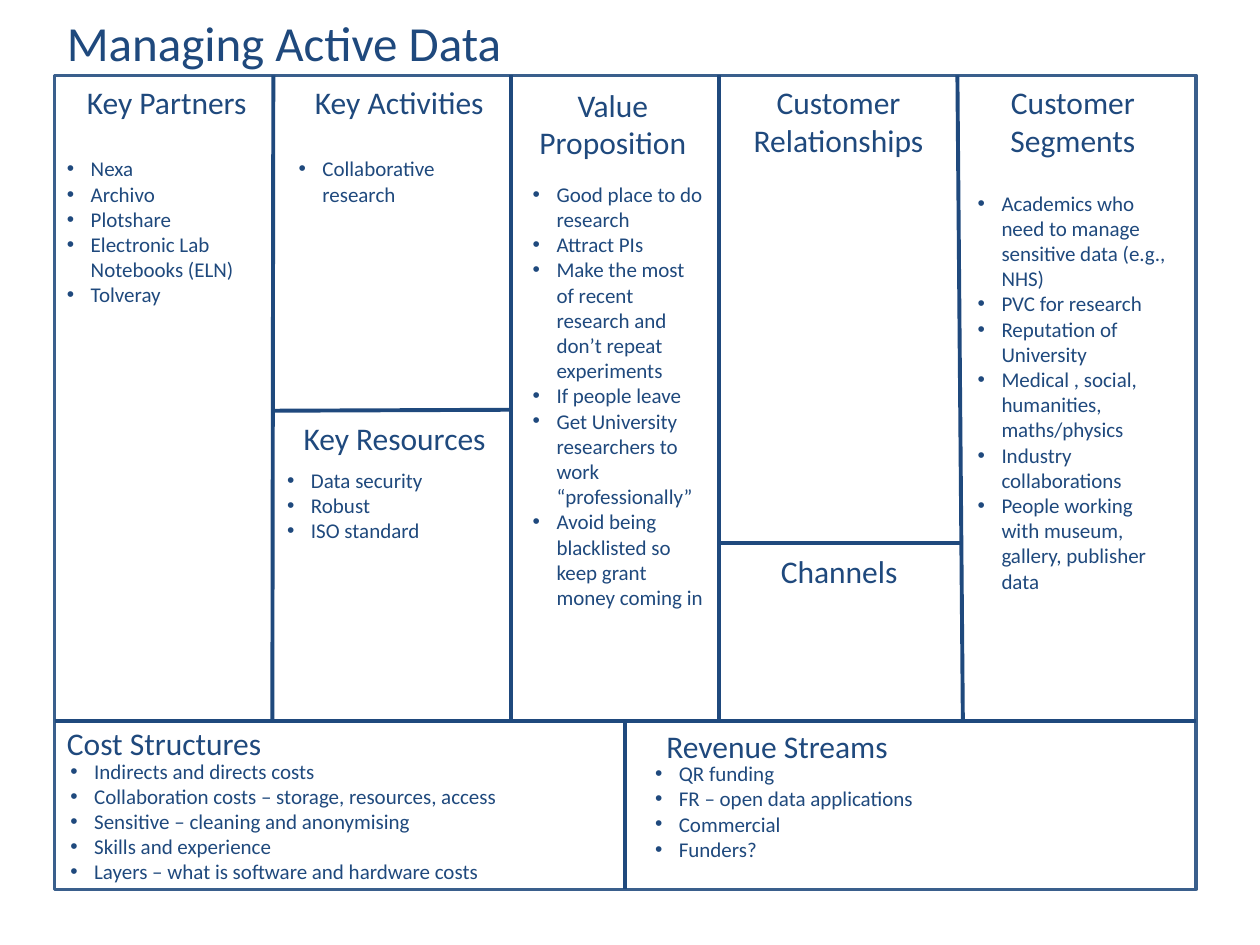
import lxml.etree
import pptx
import pptx.dml.color
import pptx.enum.shapes
import pptx.enum.text
import pptx.oxml.ns
import pptx.util
from pptx.util import Cm

NAVY = pptx.dml.color.RGBColor(0x1F, 0x49, 0x7D)
FRAME_BLUE = pptx.dml.color.RGBColor(0x3A, 0x5F, 0x8C)
FONT = "Calibri"
LEFT = pptx.enum.text.PP_ALIGN.LEFT
CENTER = pptx.enum.text.PP_ALIGN.CENTER

# Canvas edges and dividers, in centimetres
CANVAS = (1.1, 1.52, 23.01, 16.41)
X0, Y0 = CANVAS[:2]
X_END, Y_END = X0 + CANVAS[2], Y0 + CANVAS[3]
X1, X2, X3, X4 = 5.5, 10.31, 14.5, 19.35
X_MIDDLE = X0 + CANVAS[2] / 2
Y_RESOURCES, Y_CHANNELS, Y_BOTTOM = 8.27, 10.95, 14.53

DIVIDERS = [
    (5.51, Y0, 5.49, Y_BOTTOM),
    (X2, Y0, X2, Y_BOTTOM),
    (X3, Y0, X3, Y_BOTTOM),
    (19.3, Y0, 19.41, Y_BOTTOM),
    (5.49, 8.28, 10.29, 8.26),
    (X3, Y_CHANNELS, 19.41, Y_CHANNELS),
    (X0, Y_BOTTOM, X_END, Y_BOTTOM),
]

# Cell corner, heading, heading box, alignment, list box, items.
# Boxes are left, top, width, height measured from the cell corner.
CELLS = [
    ((X0, Y0), "Key Partners", (0.4, 0.03, 3.76, 1.02), LEFT,
     (0, 1.5, 4.39, 7.95),
     ["Nexa", "Archivo", "Plotshare", "Electronic Lab Notebooks (ELN)", "Tolveray"]),
    ((X1, Y0), "Key Activities", (0.6, 0.03, 3.96, 1.02), LEFT,
     (0.27, 1.5, 4.39, 1.8), ["Collaborative research"]),
    ((X1, Y_RESOURCES), "Key Resources", (0.37, 0.06, 4.22, 1.02), LEFT,
     (0.04, 1.03, 4.85, 1.8), ["Data security", "Robust", "ISO standard"]),
    ((X2, Y0), "Value Proposition", (0.1, 0.08, 3.89, 1.8), CENTER,
     (0.18, 2.01, 3.99, 8.97),
     ["Good place to do research", "Attract PIs",
      "Make the most of recent research and don’t repeat experiments",
      "If people leave", "Get University researchers to work “professionally”",
      "Avoid being blacklisted so keep grant money coming in"]),
    ((X3, Y0), "Customer Relationships", (0.21, 0.03, 4.39, 1.8), CENTER,
     None, []),
    ((X3, Y_CHANNELS), "Channels", (0.99, 0.05, 2.9, 1.02), LEFT, None, []),
    ((X4, Y0), "Customer Segments", (0.11, 0.03, 4.34, 1.8), CENTER,
     (0.11, 2.19, 4.39, 10.52),
     ["Academics who need to manage sensitive data (e.g., NHS)",
      "PVC for research", "Reputation of University",
      "Medical , social, humanities, maths/physics",
      "Industry collaborations",
      "People working with museum, gallery, publisher data"]),
    ((X0, Y_BOTTOM), "Cost Structures", (0, -0.05, 4.47, 1.02), LEFT,
     (0.07, 0.63, 10.52, 3.33),
     ["Indirects and directs costs",
      "Collaboration costs – storage, resources, access",
      "Sensitive – cleaning and anonymising", "Skills and experience",
      "Layers – what is software and hardware costs"]),
    ((X_MIDDLE, Y_BOTTOM), "Revenue Streams", (0.58, 0, 5.03, 1.02), LEFT,
     (0.35, 0.68, 10.52, 2.31),
     ["QR funding", "FR – open data applications", "Commercial", "Funders?"]),
]


def add_text(slide, box, lines, size, alignment=LEFT, wrap=True):
    text_frame = slide.shapes.add_textbox(*map(Cm, box)).text_frame
    text_frame.word_wrap = wrap
    text_frame.text = "\n".join(lines)
    for paragraph in text_frame.paragraphs:
        paragraph.alignment = alignment
        for run in paragraph.runs:
            run.font.size = pptx.util.Pt(size)
            run.font.name = FONT
            run.font.color.rgb = NAVY
    return text_frame


def add_bullet(paragraph):
    properties = paragraph._p.get_or_add_pPr()
    properties.set("marL", str(Cm(0.48)))
    properties.set("indent", str(-Cm(0.48)))
    font = lxml.etree.SubElement(properties, pptx.oxml.ns.qn("a:buFont"))
    font.set("typeface", "Arial")
    bullet = lxml.etree.SubElement(properties, pptx.oxml.ns.qn("a:buChar"))
    bullet.set("char", "•")


def add_frame(slide, box):
    frame = slide.shapes.add_shape(
        pptx.enum.shapes.MSO_SHAPE.RECTANGLE, *map(Cm, box))
    frame.shadow.inherit = False
    frame.fill.background()
    frame.line.color.rgb = FRAME_BLUE
    frame.line.width = pptx.util.Pt(2)
    return frame


def add_divider(slide, ends):
    divider = slide.shapes.add_connector(
        pptx.enum.shapes.MSO_CONNECTOR.STRAIGHT, *map(Cm, ends))
    divider.line.color.rgb = NAVY
    divider.line.width = pptx.util.Pt(2.25)
    lxml.etree.SubElement(
        divider._element.spPr, pptx.oxml.ns.qn("a:effectLst"))
    return divider


def add_grid(slide):
    frame = add_frame(slide, CANVAS)
    for ends in DIVIDERS:
        add_divider(slide, ends)
    bottom_divider = add_divider(slide, (X_MIDDLE, Y_BOTTOM, X_MIDDLE, Y_END))
    bottom_divider.end_connect(frame, 2)


def add_cell(slide, corner, heading, heading_box, alignment, list_box, items):
    def place(box):
        return (corner[0] + box[0], corner[1] + box[1], *box[2:])

    add_text(slide, place(heading_box), [heading], 18, alignment,
             wrap=alignment == CENTER)
    if items:
        text_frame = add_text(slide, place(list_box), items, 12)
        for paragraph in text_frame.paragraphs:
            add_bullet(paragraph)


def main():
    presentation = pptx.Presentation()
    presentation.slide_width = Cm(25.4)
    presentation.slide_height = Cm(19.05)
    slide = presentation.slides.add_slide(presentation.slide_layouts[6])
    add_grid(slide)
    add_text(slide, (X0, 0.13, 9.37, 1.45), ["Managing Active Data"], 28,
             wrap=False)
    for cell in CELLS:
        add_cell(slide, *cell)
    presentation.save("out.pptx")


if __name__ == "__main__":
    main()
